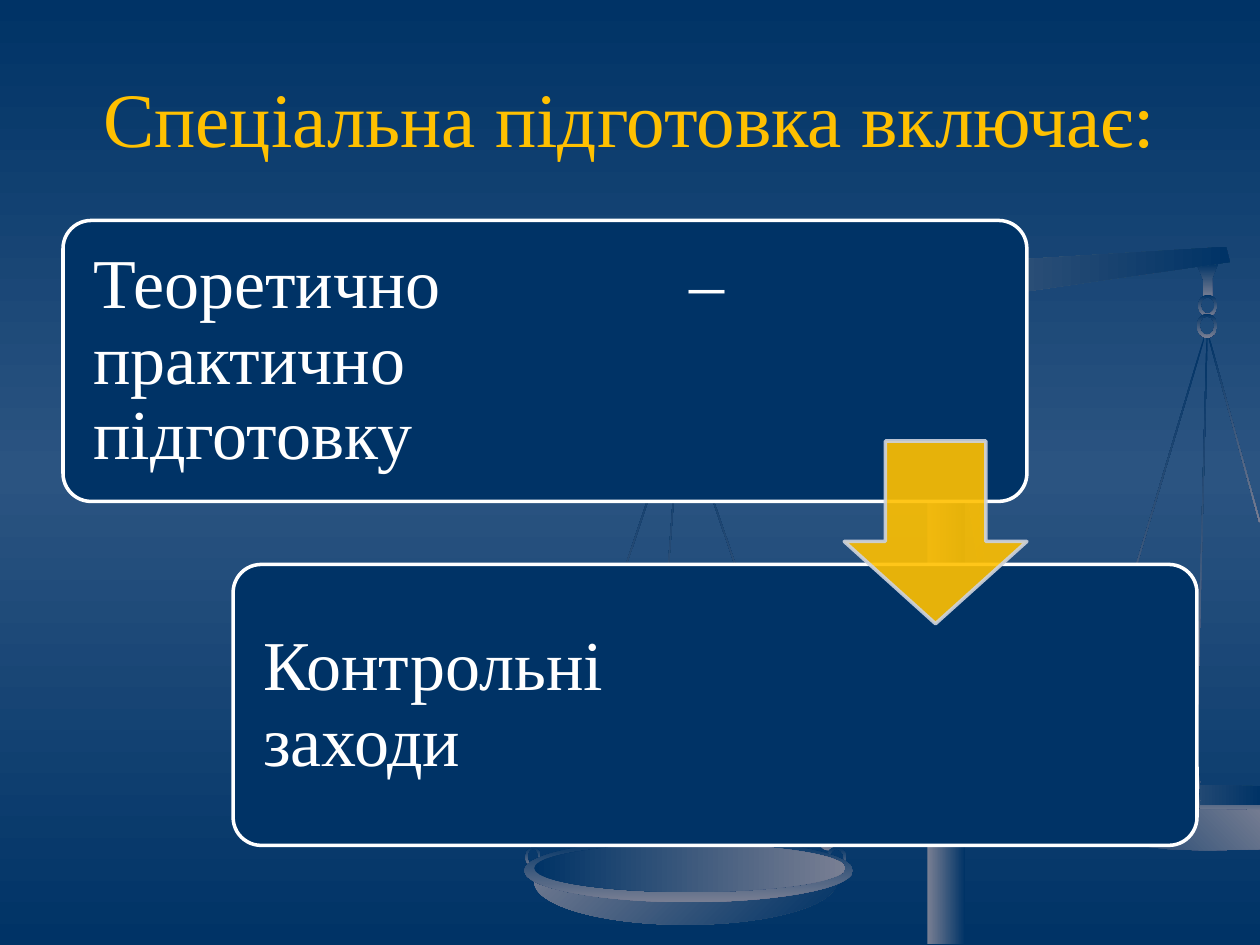
import copy

import pptx
import pptx.dml.color
import pptx.enum.shapes
import pptx.enum.text
import pptx.oxml
import pptx.oxml.ns
import pptx.util

Inches = pptx.util.Inches
Pt = pptx.util.Pt
RGBColor = pptx.dml.color.RGBColor
Preset = pptx.enum.shapes.MSO_SHAPE
Align = pptx.enum.text.PP_ALIGN
Anchor = pptx.enum.text.MSO_ANCHOR
qn = pptx.oxml.ns.qn

NAVY = RGBColor(0x00, 0x33, 0x66)
BLUE = RGBColor(0x2B, 0x54, 0x81)
STEEL = RGBColor(0x79, 0x7F, 0x93)
SILVER = RGBColor(0xCE, 0xD3, 0xDE)
GOLD = RGBColor(0xFF, 0xC0, 0x00)
WHITE = RGBColor(0xFF, 0xFF, 0xFF)
FONT = "Times New Roman"


def paint_gradient(fill, first, last, angle):
    """Fill with two colours; the angle runs clockwise in degrees."""
    fill.gradient()
    fill.gradient_angle = (360 - angle) % 360
    for stop, position, color in zip(fill.gradient_stops, (0, 1), (first, last)):
        stop.position = position
        stop.color.rgb = color


def add_run(paragraph, text, size, color):
    run = paragraph.add_run()
    run.text = text
    run.font.name = FONT
    run.font.size = Pt(size)
    run.font.color.rgb = color


presentation = pptx.Presentation()
presentation.slide_width = Inches(10)
presentation.slide_height = Inches(7.5)
slide = presentation.slides.add_slide(presentation.slide_layouts[5])
shapes = slide.shapes

# Background: navy at both ends, lighter in the middle
paint_gradient(slide.background.fill, NAVY, BLUE, 90)
stop_list = slide.element.find(".//" + qn("a:gsLst"))
end_stop = copy.deepcopy(stop_list[0])
stop_list[1].set("pos", "50000")
end_stop.set("pos", "100000")
stop_list.append(end_stop)

# Scales, from back to front: preset parts are
# (preset, left, top, width, height, rotation, first, last, angle)
# and outlined parts are (points, first, last, angle)
strings = [
    (Preset.RECTANGLE, left, top, 0.01, height, rotation, NAVY, STEEL, 90)
    for left, top, height, rotation in (
        (9.04, 2.6, 3.6, 16.6), (9.53, 2.66, 3.47, 1.5), (9.79, 2.64, 1.53, 344.6),
        (5.98, 3.15, 3.53, 341), (4.79, 3.16, 3.68, 18.6), (5.27, 3.25, 3.31, 4.2),
    )
]
rings = [
    (Preset.DONUT, left, top, width, height, 0, NAVY, STEEL, 90)
    for left, top, width, height in (
        (9.51, 2.34, 0.15, 0.17), (9.5, 2.49, 0.16, 0.19), (9.42, 6.12, 0.11, 0.17),
        (9.41, 6.26, 0.12, 0.19), (5.09, 6.55, 0.15, 0.16), (6.5, 6.58, 0.16, 0.17),
        (6.56, 6.72, 0.16, 0.19), (4.17, 6.72, 0.12, 0.16),
    )
]
right_pan = [
    ([(10, 6.26), (9.58, 6.24), (8.85, 6.23), (8.46, 6.24), (8.27, 6.28), (8.42, 6.36),
      (8.78, 6.41), (9.35, 6.44), (10, 6.45)], NAVY, STEEL, 90),
    ([(8.31, 6.33), (8.42, 6.49), (8.65, 6.63), (8.92, 6.7), (9.28, 6.74), (9.57, 6.75),
      (10, 6.74), (10, 6.43), (9.18, 6.42), (8.57, 6.37)], NAVY, STEEL, 315),
    ([(10, 6.24), (9.56, 6.23), (8.62, 6.23), (8.34, 6.28), (8.52, 6.33), (8.93, 6.37),
      (9.55, 6.39), (10, 6.39)], STEEL, NAVY, 0),
]
beam = [
    ([(9.67, 2.09), (9.5, 2.1), (9.55, 2.22), (9.55, 2.36), (9.62, 2.36), (9.62, 2.21)],
     NAVY, STEEL, 90),
    ([(9.73, 1.96), (9.76, 2.08), (5.25, 2.73), (5.24, 2.64), (7.37, 2.12), (7.59, 2.09)],
     STEEL, NAVY, 0),
]
left_pan = [
    (Preset.OVAL, 4.24, 6.66, 2.4, 0.68, 0, STEEL, NAVY, 45),
    (Preset.OVAL, 4.16, 6.66, 2.61, 0.5, 0, NAVY, STEEL, 90),
    (Preset.OVAL, 4.24, 6.7, 2.47, 0.38, 0, NAVY, STEEL, 0),
]
post = [
    (Preset.RECTANGLE, 7.36, 3.08, 0.3, 4.41, 0, STEEL, NAVY, 0),
    ([(7.91, 5.39), (7.5, 2.8), (7.48, 2.68), (7.6, 2.65), (7.63, 2.77)], STEEL, NAVY, 45),
]
for part in strings + right_pan + beam + rings + left_pan + post:
    outline, *box, first, last, angle = part
    if box:
        left, top, width, height, rotation = box
        shape = shapes.add_shape(
            outline, Inches(left), Inches(top), Inches(width), Inches(height))
        shape.rotation = rotation
        if outline == Preset.DONUT:
            shape.adjustments[0] = 0.13
    else:
        points = [(Inches(x), Inches(y)) for x, y in outline]
        builder = shapes.build_freeform(*points[0])
        builder.add_line_segments(points[1:], close=True)
        shape = builder.convert_to_shape()
    shape.shadow.inherit = False
    shape.line.fill.background()
    paint_gradient(shape.fill, first, last, angle)

# Title
title = shapes.title
title.left, title.top = Inches(0.5), Inches(0.3)
title.width, title.height = Inches(9), Inches(1.25)
title.text_frame.vertical_anchor = Anchor.MIDDLE
paragraph = title.text_frame.paragraphs[0]
paragraph.alignment = Align.CENTER
add_run(paragraph, "Спеціальна підготовка включає:", 44, GOLD)

# Two steps, each a card with its text
steps = (
    (0.5, 1.75, 5.35, Align.JUSTIFY, "Теоретично – практично підготовку"),
    (1.85, 4.48, 4.72, Align.LEFT, "Контрольні заходи"),
)
for left, top, text_width, alignment, text in steps:
    card = shapes.add_shape(
        Preset.ROUNDED_RECTANGLE, Inches(left), Inches(top), Inches(7.65), Inches(2.23))
    card.adjustments[0] = 0.1
    card.shadow.inherit = False
    card.fill.solid()
    card.fill.fore_color.rgb = NAVY
    card.line.color.rgb = WHITE
    card.line.width = Pt(2)

    text_box = shapes.add_textbox(
        Inches(left + 0.07), Inches(top + 0.07), Inches(text_width), Inches(2.1))
    frame = text_box.text_frame
    frame.word_wrap = True
    frame.vertical_anchor = Anchor.MIDDLE
    frame.margin_left = frame.margin_right = Inches(0.17)
    frame.margin_top = frame.margin_bottom = Inches(0.17)
    paragraph = frame.paragraphs[0]
    paragraph.alignment = alignment
    paragraph.line_spacing = 0.9
    add_run(paragraph, text, 40, WHITE)

# Arrow from the first step to the second, slightly transparent
arrow = shapes.add_shape(
    Preset.DOWN_ARROW, Inches(6.7), Inches(3.5), Inches(1.45), Inches(1.45))
arrow.adjustments[0] = 0.55
arrow.adjustments[1] = 0.45
arrow.shadow.inherit = False
arrow.fill.solid()
arrow.fill.fore_color.rgb = GOLD
arrow.line.color.rgb = SILVER
arrow.line.width = Pt(2)
for color in arrow.element.spPr.iter(qn("a:srgbClr")):
    alpha = pptx.oxml.parse_xml(
        '<a:alpha xmlns:a="http://schemas.openxmlformats.org/drawingml/2006/main" val="90000"/>')
    color.append(alpha)

presentation.save("out.pptx")
